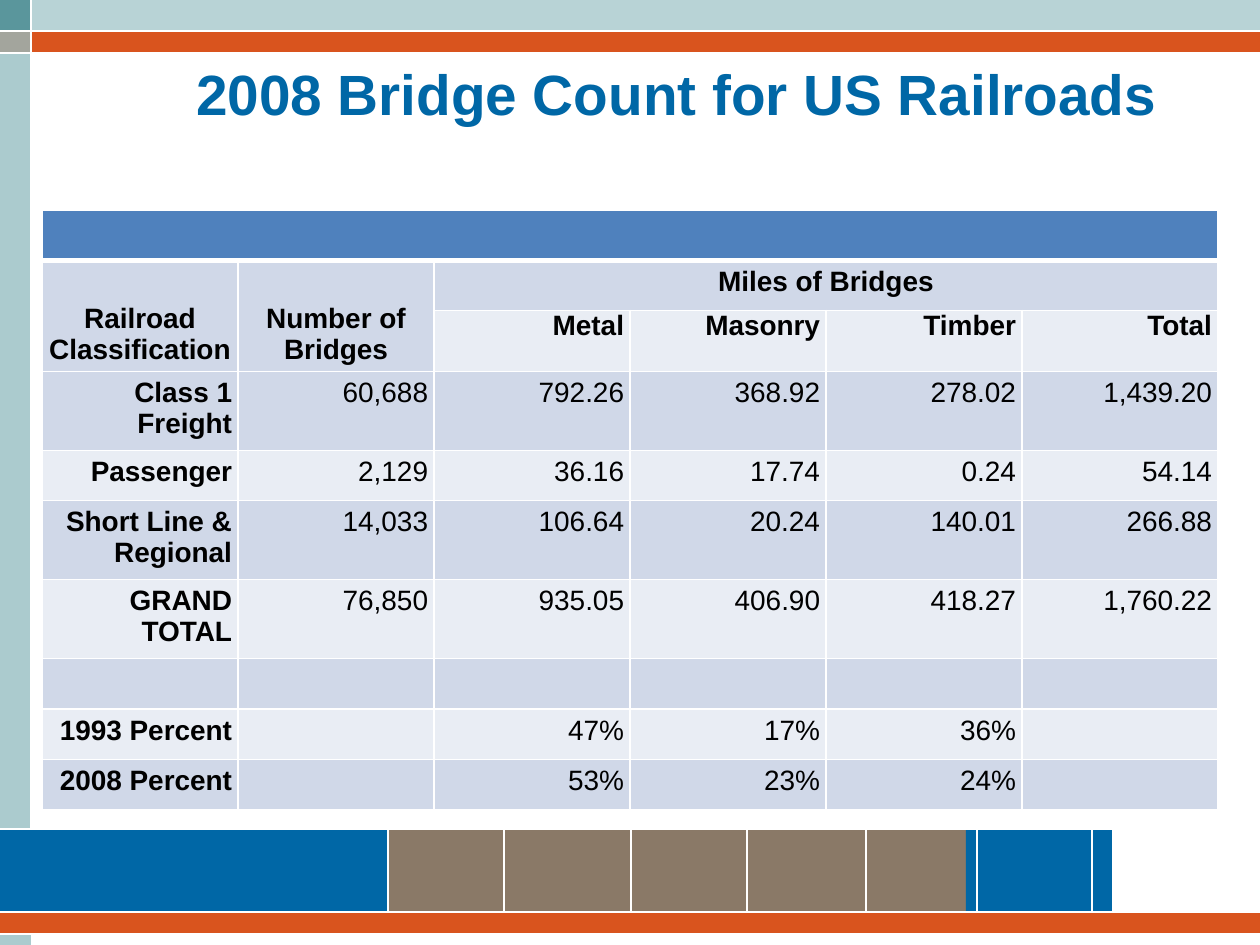
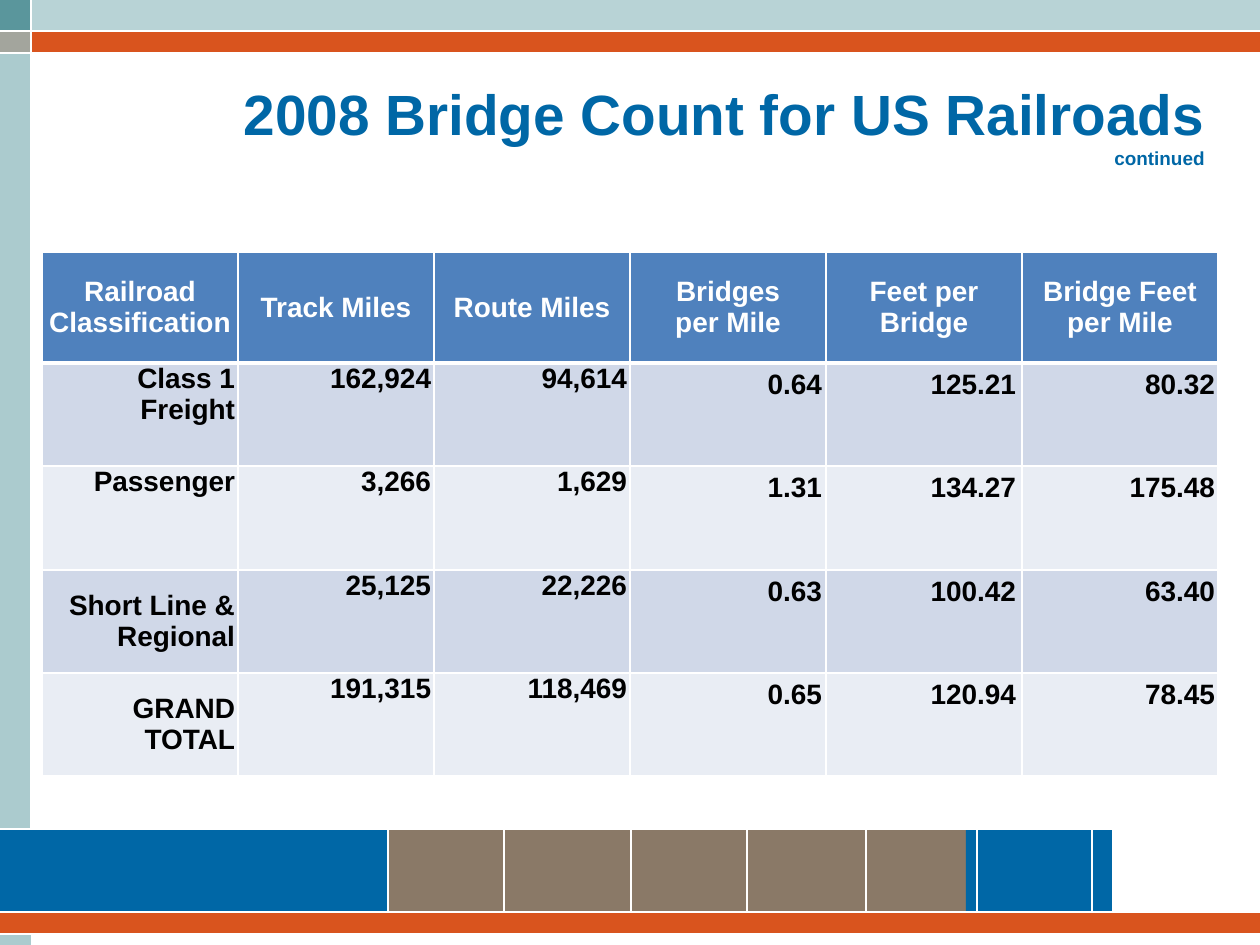
import pptx
import pptx.util
import pptx.dml.color
import pptx.enum.shapes
import pptx.enum.text
import pptx.oxml
import pptx.oxml.ns

ALIGN = pptx.enum.text.PP_ALIGN
ANCHOR = pptx.enum.text.MSO_ANCHOR
SCALE = 914400 / 126
WIDE, HIGH = 1260, 945

INK = {
    "blue": "0067A6", "taupe": "8A7967", "rust": "D9541E", "mist": "94BDC1",
    "teal": "5A969C", "white": "FFFFFF", "black": "000000",
    "head": "4F81BD", "dark": "D0D8E8", "light": "E9EDF4",
}

# colour, opacity in percent, box
BANDS = [
    ("taupe", 100, (0, 829, 977, 105)),
    ("blue", 100, (966, 830, 146, 83)),
    ("rust", 100, (0, 31, WIDE, 22)),
    ("mist", 78, (0, 0, 31, HIGH)),
    ("mist", 66, (0, 0, WIDE, 31)),
    ("teal", 100, (0, 0, 31, 31)),
    ("blue", 100, (0, 829, 388, 105)),
    ("rust", 100, (0, 912, WIDE, 22)),
]
SPLITS = [388, 504, 631, 747, 866, 977, 1092]
RULES = [(31, 0, 31, 829)]
RULES += [(x, 829, x, 912) for x in SPLITS]
RULES += [(0, y, WIDE, y) for y in (31, 53, 829, 912, 934)]

TITLE = "2008 Bridge Count for US Railroads"
TITLE_BOX = (136, 53, 1081, 142)
LEFT, COL = 42, 196

BASE = {"side": 6, "top": 6, "foot": 6, "anchor": ANCHOR.TOP,
        "align": ALIGN.RIGHT, "bold": True, "ink": "black"}
CENTRE = {"side": 0, "align": ALIGN.CENTER}
TIGHT = {"side": 3, "top": 0, "foot": 0}

# Each style entry: rows, columns, the values that differ from BASE
SLIDES = [
    {
        "title": [(TITLE, 32.4)],
        "align": ALIGN.CENTER, "anchor": ANCHOR.TOP,
        "top": 210,
        "heights": [50, 50, 61, 78, 50, 78, 78, 50, 50, 50],
        "rows": [
            [""] * 6,
            ["Railroad Classification", "Number of Bridges",
             "Miles of Bridges", "", "", ""],
            ["", "", "Metal", "Masonry", "Timber", "Total"],
            ["Class 1 Freight", "60,688", "792.26", "368.92", "278.02", "1,439.20"],
            ["Passenger", "2,129", "36.16", "17.74", "0.24", "54.14"],
            ["Short Line & Regional", "14,033", "106.64", "20.24", "140.01", "266.88"],
            ["GRAND TOTAL", "76,850", "935.05", "406.90", "418.27", "1,760.22"],
            [""] * 6,
            ["1993 Percent", "", "47%", "17%", "36%", ""],
            ["2008 Percent", "", "53%", "23%", "24%", ""],
        ],
        "spans": [(0, 0, 0, 5), (1, 0, 2, 0), (1, 1, 2, 1), (1, 2, 1, 5)],
        "styles": [
            (range(1, 2), range(6), CENTRE),
            (range(1, 2), range(2), {"anchor": ANCHOR.BOTTOM}),
            (range(2, 3), range(2, 6), {"top": 0}),
            (range(3, 10), range(1, 6), {"bold": False}),
        ],
    },
    {
        "title": [(TITLE, 32.4), ("continued", 10.8)],
        "align": ALIGN.RIGHT, "anchor": ANCHOR.MIDDLE,
        "top": 252,
        "heights": [111, 103, 104, 103, 103],
        "rows": [
            ["Railroad Classification", "Track Miles", "Route Miles",
             "Bridges\nper Mile", "Feet per Bridge", "Bridge Feet per Mile"],
            ["Class 1 Freight", "162,924", "94,614", "0.64", "125.21", "80.32"],
            ["Passenger", "3,266", "1,629", "1.31", "134.27", "175.48"],
            ["Short Line & Regional", "25,125", "22,226", "0.63", "100.42", "63.40"],
            ["GRAND TOTAL", "191,315", "118,469", "0.65", "120.94", "78.45"],
        ],
        "spans": [],
        "styles": [
            (range(5), range(3), TIGHT),
            (range(5), range(3, 4), {"side": 4}),
            (range(1, 5), range(5, 6), {"side": 3}),
            (range(3, 5), range(1), {"anchor": ANCHOR.MIDDLE}),
            (range(1), range(6), {"align": ALIGN.CENTER, "ink": "white",
                                  "anchor": ANCHOR.MIDDLE}),
            (range(1), range(4, 5), {"side": 0}),
        ],
    },
]


def emu(*nums):
    return [pptx.util.Emu(round(n * SCALE)) for n in nums]


def rgb(name):
    return pptx.dml.color.RGBColor.from_string(INK[name])


def node(tag, attrs="", inner=""):
    """Parse one drawing element from its tag, attributes and content."""
    space = pptx.oxml.ns.nsdecls("a")
    return pptx.oxml.parse_xml(f"<a:{tag} {space} {attrs}>{inner}</a:{tag}>")


def put(item, **values):
    for name, value in values.items():
        setattr(item, name, value)


def paint(fill, name):
    fill.solid()
    fill.fore_color.rgb = rgb(name)


def write(para, text, size, ink, bold, align):
    para.alignment = align
    run = para.add_run()
    run.text = text
    put(run.font, name="Arial", size=pptx.util.Pt(size), bold=bold)
    run.font.color.rgb = rgb(ink)


def add_band(slide, ink, alpha, box):
    kind = pptx.enum.shapes.MSO_SHAPE.RECTANGLE
    band = slide.shapes.add_shape(kind, *emu(*box))
    band.shadow.inherit = False
    band.line.fill.background()
    paint(band.fill, ink)
    if alpha < 100:
        tone = band._element.spPr.find(".//" + pptx.oxml.ns.qn("a:srgbClr"))
        tone.append(node("alpha", f'val="{alpha * 1000}"'))


def add_rule(slide, ends):
    kind = pptx.enum.shapes.MSO_CONNECTOR.STRAIGHT
    rule = slide.shapes.add_connector(kind, *emu(*ends))
    rule.line.width = pptx.util.Pt(1)
    rule.line.color.rgb = rgb("white")
    rule._element.spPr.append(node("effectLst"))


def add_title(slide, page):
    frame = slide.shapes.add_textbox(*emu(*TITLE_BOX)).text_frame
    put(frame, word_wrap=True, vertical_anchor=page["anchor"])
    for i, (text, size) in enumerate(page["title"]):
        para = frame.add_paragraph() if i else frame.paragraphs[0]
        write(para, text, size, "blue", True, page["align"])


def edge(cell, foot):
    """White cell borders, the bottom one foot points wide."""
    props = cell._tc.get_or_add_tcPr()
    tone = f'<a:solidFill><a:srgbClr val="{INK["white"]}"/></a:solidFill>'
    for i, side in enumerate("LRTB"):
        width = pptx.util.Pt(foot if side == "B" else 1)
        props.insert(i, node("ln" + side, f'w="{width}"', tone))


def fill_cell(cell, text, look):
    side, top, foot = emu(look["side"], look["top"], look["foot"])
    put(cell, margin_left=side, margin_right=side, margin_top=top,
        margin_bottom=foot, vertical_anchor=look["anchor"])
    frame = cell.text_frame
    for i, line in enumerate(text.split("\n")):
        para = frame.add_paragraph() if i else frame.paragraphs[0]
        write(para, line, 16, look["ink"], look["bold"], look["align"])


def add_grid(slide, page):
    rows, highs = page["rows"], page["heights"]
    count = len(rows[0])
    box = emu(LEFT, page["top"], COL * count, sum(highs))
    grid = slide.shapes.add_table(len(rows), count, *box).table
    put(grid, first_row=False, horz_banding=False)
    for col in grid.columns:
        col.width = emu(COL)[0]
    for r, line in enumerate(rows):
        grid.rows[r].height = emu(highs[r])[0]
        for c, text in enumerate(line):
            cell = grid.cell(r, c)
            paint(cell.fill, "head" if r == 0 else ("light", "dark")[r % 2])
            edge(cell, 1 if r else 3)
            look = dict(BASE)
            for down, across, change in page["styles"]:
                if r in down and c in across:
                    look.update(change)
            if text:
                fill_cell(cell, text, look)
    for r, c, last, end in page["spans"]:
        grid.cell(r, c).merge(grid.cell(last, end))


def main():
    deck = pptx.Presentation()
    deck.slide_width, deck.slide_height = emu(WIDE, HIGH)
    for page in SLIDES:
        slide = deck.slides.add_slide(deck.slide_layouts[6])
        for band in BANDS:
            add_band(slide, *band)
        for ends in RULES:
            add_rule(slide, ends)
        add_title(slide, page)
        add_grid(slide, page)
    deck.save("out.pptx")


if __name__ == "__main__":
    main()
